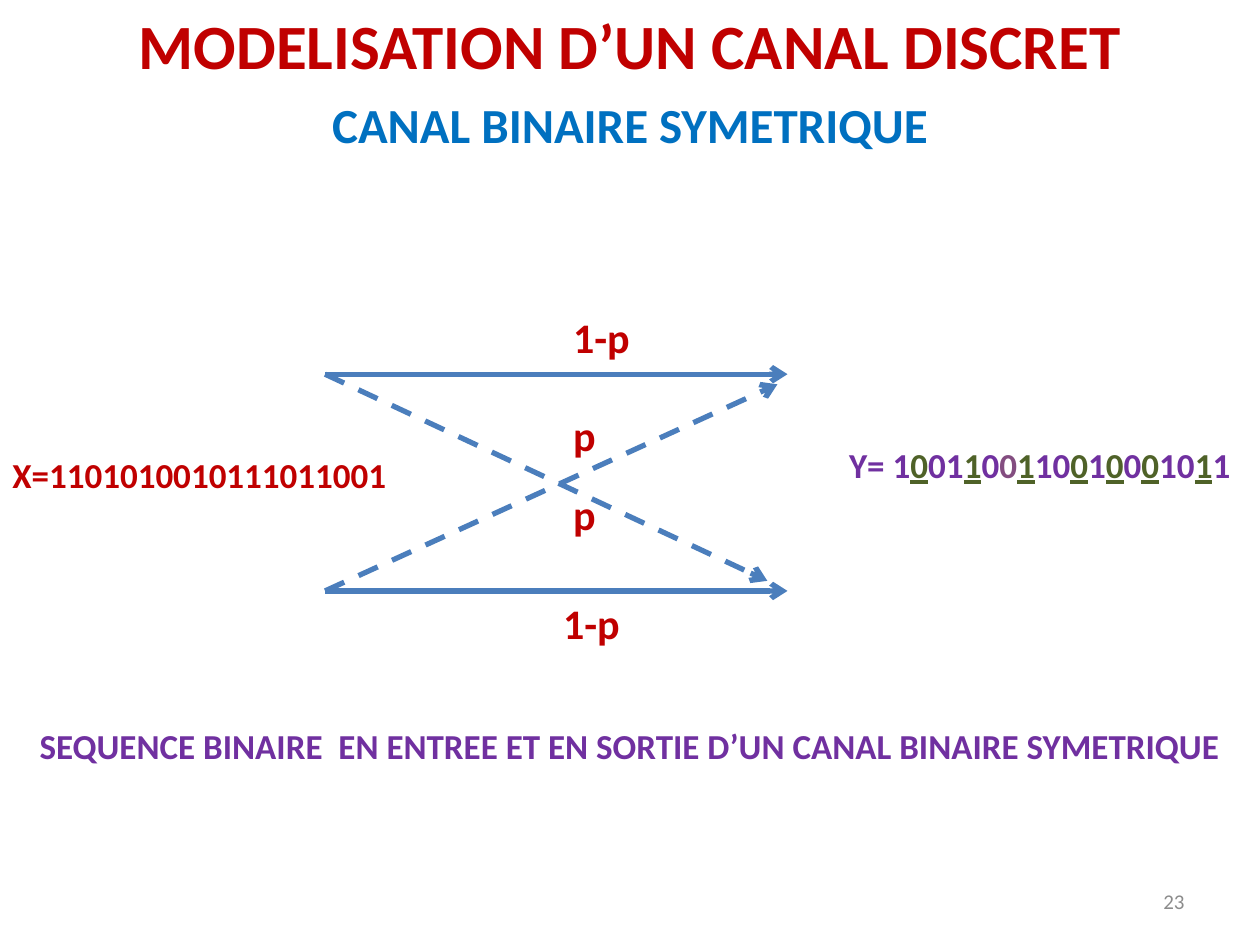
from itertools import groupby

from lxml.etree import SubElement
from pptx import Presentation
from pptx.dml.color import RGBColor
from pptx.enum.dml import MSO_LINE
from pptx.enum.shapes import MSO_CONNECTOR
from pptx.enum.text import MSO_ANCHOR, MSO_AUTO_SIZE, PP_ALIGN
from pptx.oxml.ns import qn
from pptx.util import Inches, Pt

RED = RGBColor(0xC0, 0x00, 0x00)
BLUE = RGBColor(0x00, 0x70, 0xC0)
PURPLE = RGBColor(0x70, 0x30, 0xA0)
GREEN = RGBColor(0x4F, 0x62, 0x28)
MAUVE = RGBColor(0x83, 0x4D, 0x80)
GRAY = RGBColor(0x8C, 0x8C, 0x8C)
LINE_BLUE = RGBColor(0x4B, 0x7E, 0xBC)

RECEIVED = "1001100110010001011"
ERRORS = {1, 4, 7, 10, 12, 14, 17}
TINTED = 6


class ChannelSlide:
    font_name = "Calibri"
    line_width = Pt(3)

    def __init__(self, presentation):
        self.slide = presentation.slides.add_slide(presentation.slide_layouts[5])

    def fill_text(self, shape, text, size, color, bold=True, align=PP_ALIGN.LEFT,
                  anchor=MSO_ANCHOR.TOP, wrap=True):
        """Fill a shape with one formatted paragraph and return that paragraph."""
        frame = shape.text_frame
        frame.auto_size = MSO_AUTO_SIZE.NONE
        frame.word_wrap = wrap
        frame.vertical_anchor = anchor
        paragraph = frame.paragraphs[0]
        paragraph.text = text
        paragraph.alignment = align
        font = paragraph.font
        font.name, font.size, font.bold = self.font_name, Pt(size), bold
        font.color.rgb = color
        return paragraph

    def title(self, text):
        shape = self.slide.shapes.title
        shape.left, shape.top = Inches(0), Inches(0)
        shape.width, shape.height = Inches(10), Inches(0.71)
        self.fill_text(shape, text, 36, RED, align=PP_ALIGN.CENTER)

    def text(self, box, text, size, color, **style):
        shape = self.slide.shapes.add_textbox(*map(Inches, box))
        return self.fill_text(shape, text, size, color, **style)

    def bits(self, box, label, bits):
        """Show a bit sequence with its errors underlined in green."""
        paragraph = self.text(box, label, 20, PURPLE, wrap=False)

        def color_at(position):
            if position in ERRORS:
                return GREEN
            return MAUVE if position == TINTED else PURPLE

        for color, positions in groupby(range(len(bits)), color_at):
            run = paragraph.add_run()
            run.text = "".join(bits[position] for position in positions)
            run.font.color.rgb = color
            run.font.underline = color == GREEN

    def arrow(self, start, end, dashed=False):
        connector = self.slide.shapes.add_connector(
            MSO_CONNECTOR.STRAIGHT, *map(Inches, start + end))
        line = connector.line
        line.color.rgb = LINE_BLUE
        line.width = self.line_width
        if dashed:
            line.dash_style = MSO_LINE.DASH
        properties = connector._element.spPr
        SubElement(properties.find(qn("a:ln")), qn("a:tailEnd"), type="arrow")
        SubElement(properties, qn("a:effectLst"))


def main():
    presentation = Presentation()
    presentation.slide_width, presentation.slide_height = Inches(10), Inches(7.5)
    page = ChannelSlide(presentation)

    page.title("MODELISATION D’UN CANAL DISCRET")
    page.text((0, 0.7, 10, 0.88), "CANAL BINAIRE SYMETRIQUE", 28, BLUE,
              align=PP_ALIGN.CENTER)
    page.text((0, 5.7, 10, 0.44),
              "SEQUENCE BINAIRE  EN ENTREE ET EN SORTIE D’UN CANAL BINAIRE SYMETRIQUE",
              20, PURPLE, align=PP_ALIGN.CENTER)
    page.text((0, 3.55, 3.2, 0.44), "X=1101010010111011001", 20, RED, wrap=False)
    page.bits((6.64, 3.47, 3.28, 0.44), "Y= ", RECEIVED)

    left, right, upper, lower = 2.58, 6.25, 2.97, 4.69
    for level in (upper, lower):
        page.arrow((left, level), (right, level))
    page.arrow((left, lower), (6.17, upper + 0.08), dashed=True)
    page.arrow((left, upper), (6.09, lower - 0.08), dashed=True)

    for x, y, width, height, probability in (
            (4.45, 2.42, 1.15, 0.63, "1-p"), (4.45, 3.2, 0.81, 0.55, "p"),
            (4.45, 3.83, 0.81, 0.55, "p"), (4.37, 4.69, 1.15, 0.63, "1-p")):
        page.text((x, y, width, height), probability, 24, RED)

    page.text((7.17, 6.95, 2.33, 0.4), "23", 12, GRAY, bold=False,
              align=PP_ALIGN.RIGHT, anchor=MSO_ANCHOR.MIDDLE)
    presentation.save("out.pptx")


if __name__ == "__main__":
    main()
